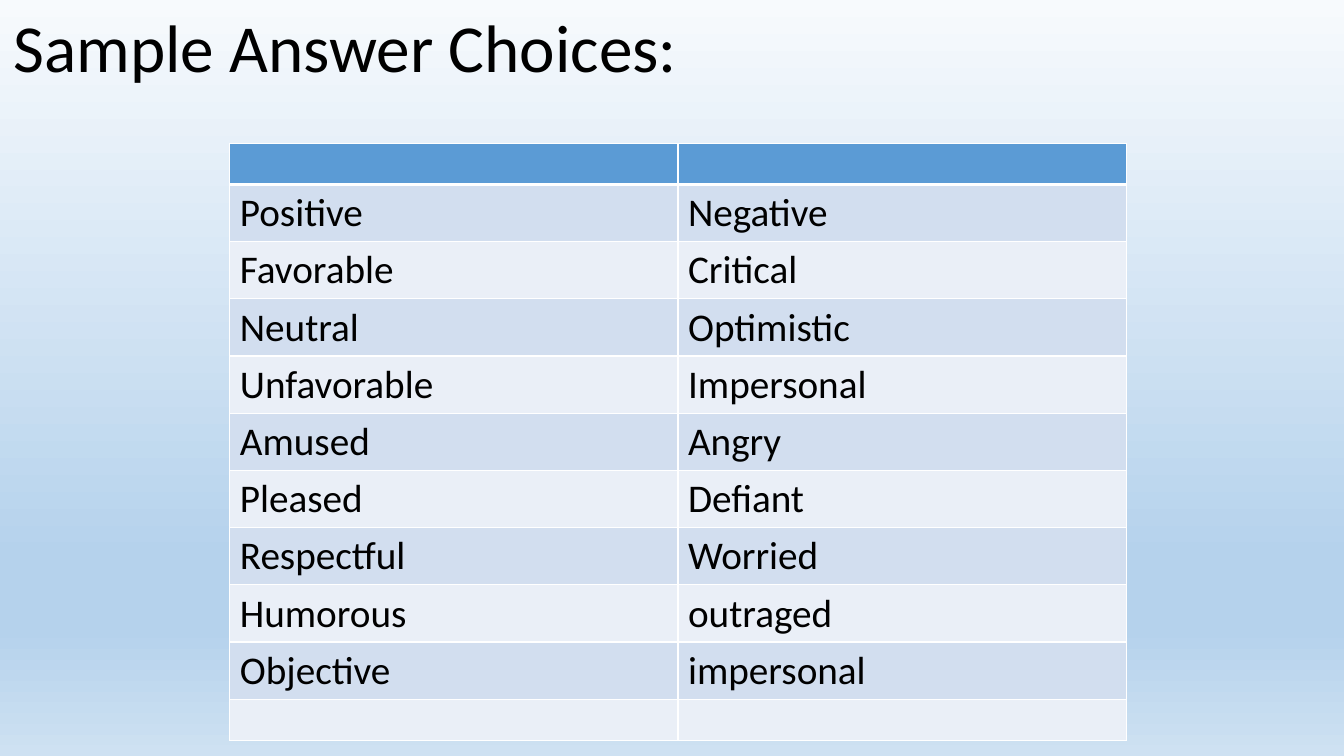
import pptx
import pptx.util
import pptx.dml.color
import pptx.enum.text
import pptx.oxml
import pptx.oxml.ns
import lxml.etree

RGBColor = pptx.dml.color.RGBColor
Inches = pptx.util.Inches
Pt = pptx.util.Pt
qn = pptx.oxml.ns.qn

TITLE = "Sample Answer Choices:"
CHOICES = [
    ("", ""),
    ("Positive", "Negative"),
    ("Favorable", "Critical"),
    ("Neutral", "Optimistic"),
    ("Unfavorable", "Impersonal"),
    ("Amused", "Angry"),
    ("Pleased", "Defiant"),
    ("Respectful", "Worried"),
    ("Humorous", "outraged"),
    ("Objective", "impersonal"),
    ("", ""),
]

FONT = "Calibri"
BLACK = RGBColor(0x00, 0x00, 0x00)
WHITE = RGBColor(0xFF, 0xFF, 0xFF)
HEADER_BLUE = RGBColor(0x5B, 0x9B, 0xD5)
BANDS = [RGBColor(0xEA, 0xEF, 0xF7), RGBColor(0xD2, 0xDE, 0xEF)]
BACKGROUND_STOPS = [
    (0, RGBColor(0xF7, 0xFA, 0xFD)),
    (74, RGBColor(0xB5, 0xD2, 0xEC)),
    (83, RGBColor(0xB5, 0xD2, 0xEC)),
    (100, RGBColor(0xCE, 0xE1, 0xF2)),
]

SLIDE_WIDTH, SLIDE_HEIGHT = 13.33, 7.5
TITLE_WIDTH, TITLE_HEIGHT = 6.85, 0.91
TABLE_LEFT, TABLE_TOP = 2.28, 1.42
TABLE_WIDTH, ROW_HEIGHT = 8.89, 0.41
THIN, THICK = 1, 3


def paint_background(slide):
    fill = slide.background.fill
    fill.gradient()
    gradient = slide.element.find(".//" + qn("a:gradFill"))
    stops = gradient.find(qn("a:gsLst"))
    for stop in list(stops):
        stops.remove(stop)
    for share, color in BACKGROUND_STOPS:
        stop = lxml.etree.SubElement(stops, qn("a:gs"), pos=str(share * 1000))
        lxml.etree.SubElement(stop, qn("a:srgbClr"), val=str(color))
    gradient.find(qn("a:lin")).set("ang", str(90 * 60000))


def add_text(paragraph, text, size):
    run = paragraph.add_run()
    run.text = text
    run.font.name = FONT
    run.font.size = Pt(size)
    run.font.color.rgb = BLACK


def add_title(slide):
    box = slide.shapes.add_textbox(0, 0, Inches(TITLE_WIDTH), Inches(TITLE_HEIGHT))
    frame = box.text_frame
    frame.word_wrap = False
    frame.auto_size = pptx.enum.text.MSO_AUTO_SIZE.SHAPE_TO_FIT_TEXT
    paragraph = frame.paragraphs[0]
    paragraph.alignment = pptx.enum.text.PP_ALIGN.CENTER
    add_text(paragraph, TITLE, 48)


def set_borders(cell, top, bottom):
    properties = cell._tc.get_or_add_tcPr()
    for side, width in (("L", THIN), ("R", THIN), ("T", top), ("B", bottom)):
        line = lxml.etree.SubElement(properties, qn("a:ln" + side), w=str(Pt(width)))
        solid = lxml.etree.SubElement(line, qn("a:solidFill"))
        lxml.etree.SubElement(solid, qn("a:srgbClr"), val=str(WHITE))


def add_choices(slide):
    row_count, column_count = len(CHOICES), len(CHOICES[0])
    table = slide.shapes.add_table(
        row_count, column_count, Inches(TABLE_LEFT), Inches(TABLE_TOP),
        Inches(TABLE_WIDTH), Inches(ROW_HEIGHT * row_count)).table
    for column in table.columns:
        column.width = Inches(TABLE_WIDTH / column_count)
    for row_index, words in enumerate(CHOICES):
        table.rows[row_index].height = Inches(ROW_HEIGHT)
        for column_index, word in enumerate(words):
            cell = table.cell(row_index, column_index)
            set_borders(cell, THICK if row_index == 1 else THIN,
                        THICK if row_index == 0 else THIN)
            cell.fill.solid()
            cell.fill.fore_color.rgb = BANDS[row_index % 2] if row_index else HEADER_BLUE
            if word:
                add_text(cell.text_frame.paragraphs[0], word, 28)


def main():
    presentation = pptx.Presentation()
    presentation.slide_width = Inches(SLIDE_WIDTH)
    presentation.slide_height = Inches(SLIDE_HEIGHT)
    slide = presentation.slides.add_slide(presentation.slide_layouts[6])
    paint_background(slide)
    add_title(slide)
    add_choices(slide)
    presentation.save("out.pptx")


if __name__ == "__main__":
    main()
